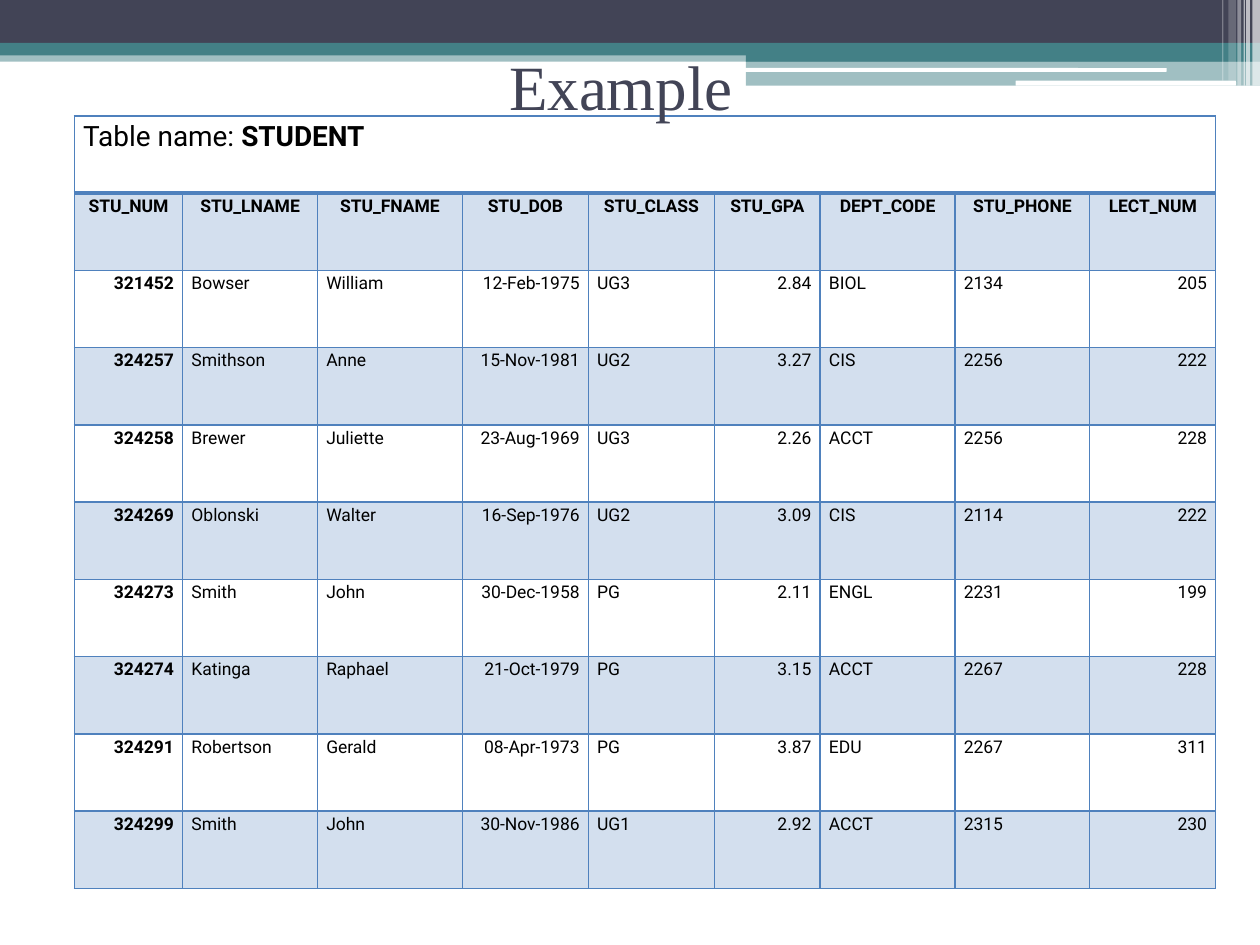
"""Build the STUDENT table example slide."""
from typing import NamedTuple

from lxml import etree
from pptx import Presentation
from pptx.dml.color import RGBColor
from pptx.enum.shapes import MSO_SHAPE
from pptx.enum.text import MSO_ANCHOR, PP_ALIGN
from pptx.oxml.ns import qn
from pptx.util import Inches, Pt

RECTANGLE, ROUNDED = MSO_SHAPE.RECTANGLE, MSO_SHAPE.ROUNDED_RECTANGLE
LEFT, CENTER, RIGHT = PP_ALIGN.LEFT, PP_ALIGN.CENTER, PP_ALIGN.RIGHT
MIDDLE = MSO_ANCHOR.MIDDLE

COLORS = {
    "navy": "424456",
    "teal": "438086",
    "white": "FFFFFF",
    "black": "000000",
    "band": "D3DFEE",
    "border": "4F81BD",
}
TABLE_FONT, TITLE_FONT = "Roboto", "Times New Roman"
ROW_HEIGHT = 0.613
THIN, THICK = 1, 2.25


class Bar(NamedTuple):
    left: float
    top: float
    width: float
    height: float
    color: str
    opacity: int = 100
    rounded: bool = False


class Column(NamedTuple):
    name: str
    width: float
    align: PP_ALIGN


BARS = [
    Bar(0, 0.4, 10, 0.09, "teal", 50),
    Bar(0, 0, 10, 0.34, "navy"),
    Bar(0, 0.34, 10, 0.1, "teal"),
    Bar(5.92, 0.39, 4.08, 0.1, "teal"),
    Bar(5.92, 0.48, 4.08, 0.2, "teal", 50),
    Bar(5.91, 0.54, 3.35, 0.03, "white", rounded=True),
    Bar(8.06, 0.64, 1.75, 0.04, "white", rounded=True),
    Bar(9.94, 0, 0.06, 0.68, "white", 65),
    Bar(9.89, 0, 0.03, 0.68, "white", 65),
    Bar(9.87, 0, 0.01, 0.68, "white", 60),
    Bar(9.82, 0, 0.03, 0.68, "white", 40),
    Bar(9.75, 0, 0.06, 0.64, "white", 20),
    Bar(9.7, 0, 0.01, 0.64, "white", 30),
]

COLUMNS = [
    Column("STU_NUM", 0.86, RIGHT),
    Column("STU_LNAME", 1.07, LEFT),
    Column("STU_FNAME", 1.15, LEFT),
    Column("STU_DOB", 1, RIGHT),
    Column("STU_CLASS", 1, LEFT),
    Column("STU_GPA", 0.84, RIGHT),
    Column("DEPT_CODE", 1.07, LEFT),
    Column("STU_PHONE", 1.07, LEFT),
    Column("LECT_NUM", 1, RIGHT),
]

STUDENTS = [
    ("321452", "Bowser", "William", "12-Feb-1975", "UG3", "2.84", "BIOL", "2134", "205"),
    ("324257", "Smithson", "Anne", "15-Nov-1981", "UG2", "3.27", "CIS", "2256", "222"),
    ("324258", "Brewer", "Juliette", "23-Aug-1969", "UG3", "2.26", "ACCT", "2256", "228"),
    ("324269", "Oblonski", "Walter", "16-Sep-1976", "UG2", "3.09", "CIS", "2114", "222"),
    ("324273", "Smith", "John", "30-Dec-1958", "PG", "2.11", "ENGL", "2231", "199"),
    ("324274", "Katinga", "Raphael", "21-Oct-1979", "PG", "3.15", "ACCT", "2267", "228"),
    ("324291", "Robertson", "Gerald", "08-Apr-1973", "PG", "3.87", "EDU", "2267", "311"),
    ("324299", "Smith", "John", "30-Nov-1986", "UG1", "2.92", "ACCT", "2315", "230"),
]


def rgb(name: str) -> RGBColor:
    """Return a named palette colour."""
    return RGBColor.from_string(COLORS[name])


def style_span(span, font: str, size: float, color: str, bold: bool = False) -> None:
    """Format one run of text."""
    span.font.name = font
    span.font.size = Pt(size)
    span.font.bold = bold
    span.font.color.rgb = rgb(color)


def draw_bar(page, bar: Bar) -> None:
    """Draw one decorative header bar."""
    kind = ROUNDED if bar.rounded else RECTANGLE
    box = page.shapes.add_shape(kind, Inches(bar.left), Inches(bar.top),
                                Inches(bar.width), Inches(bar.height))
    box.shadow.inherit = False
    box.line.fill.background()
    box.fill.solid()
    box.fill.fore_color.rgb = rgb(bar.color)
    if bar.opacity < 100:
        color = box.fill._xPr.find(".//" + qn("a:srgbClr"))
        etree.SubElement(color, qn("a:alpha"), val=str(bar.opacity * 1000))


def set_borders(cell, top: float, bottom: float) -> None:
    """Outline a cell, with its own top and bottom weights."""
    properties = cell._tc.get_or_add_tcPr()
    weights = {"a:lnL": THIN, "a:lnR": THIN, "a:lnT": top, "a:lnB": bottom}
    for position, (tag, weight) in enumerate(weights.items()):
        line = etree.Element(qn(tag), w=str(int(Pt(weight))))
        fill = etree.SubElement(line, qn("a:solidFill"))
        etree.SubElement(fill, qn("a:srgbClr"), val=COLORS["border"])
        properties.insert(position, line)


def style_cell(cell, row: int) -> None:
    """Set the margins, fill and borders that depend on the row."""
    cell.margin_left = cell.margin_right = Inches(0.07)
    cell.margin_top = cell.margin_bottom = 0
    if row % 2:
        cell.fill.solid()
        cell.fill.fore_color.rgb = rgb("band")
    else:
        cell.fill.background()
    set_borders(cell, THICK if row == 1 else THIN, THICK if row == 0 else THIN)


def write_cell(cell, text: str, align: PP_ALIGN, bold: bool) -> None:
    """Write a header or a value into a cell."""
    para = cell.text_frame.paragraphs[0]
    para.text = text
    para.alignment = align
    para.line_spacing = 1.15
    style_span(para.runs[0], TABLE_FONT, 10, "black", bold)


def draw_table(page) -> None:
    """Draw the student table with its caption row."""
    row_count = len(STUDENTS) + 2
    frame = page.shapes.add_table(
        row_count, len(COLUMNS), Inches(0.59), Inches(0.92),
        Inches(sum(column.width for column in COLUMNS)), Inches(ROW_HEIGHT * row_count))
    table = frame.table
    table.first_row = table.horz_banding = False
    for index, column in enumerate(COLUMNS):
        table.columns[index].width = Inches(column.width)
    for index, row in enumerate(table.rows):
        row.height = Inches(ROW_HEIGHT)
        for cell in row.cells:
            style_cell(cell, index)

    caption = table.cell(0, 0)
    caption.merge(table.cell(0, len(COLUMNS) - 1))
    para = caption.text_frame.paragraphs[0]
    para.line_spacing = 1.15
    for text, bold in (("Table name: ", False), ("STUDENT", True)):
        span = para.add_run()
        span.text = text
        style_span(span, TABLE_FONT, 16, "black", bold)

    for index, column in enumerate(COLUMNS):
        write_cell(table.cell(1, index), column.name, CENTER, True)
        for row, student in enumerate(STUDENTS, start=2):
            write_cell(table.cell(row, index), student[index], column.align, index == 0)


def draw_title(page) -> None:
    """Draw the slide title."""
    box = page.shapes.add_textbox(Inches(0.43), Inches(0.44), Inches(9), Inches(0.47))
    frame = box.text_frame
    frame.word_wrap = True
    frame.vertical_anchor = MIDDLE
    frame.text = "Example"
    para = frame.paragraphs[0]
    para.alignment = CENTER
    style_span(para.runs[0], TITLE_FONT, 36, "navy")


def main() -> None:
    """Build and save the deck."""
    deck = Presentation()
    deck.slide_width, deck.slide_height = Inches(10), Inches(7.5)
    page = deck.slides.add_slide(deck.slide_layouts[6])
    for bar in BARS:
        draw_bar(page, bar)
    draw_table(page)
    draw_title(page)
    deck.save("out.pptx")


if __name__ == "__main__":
    main()
